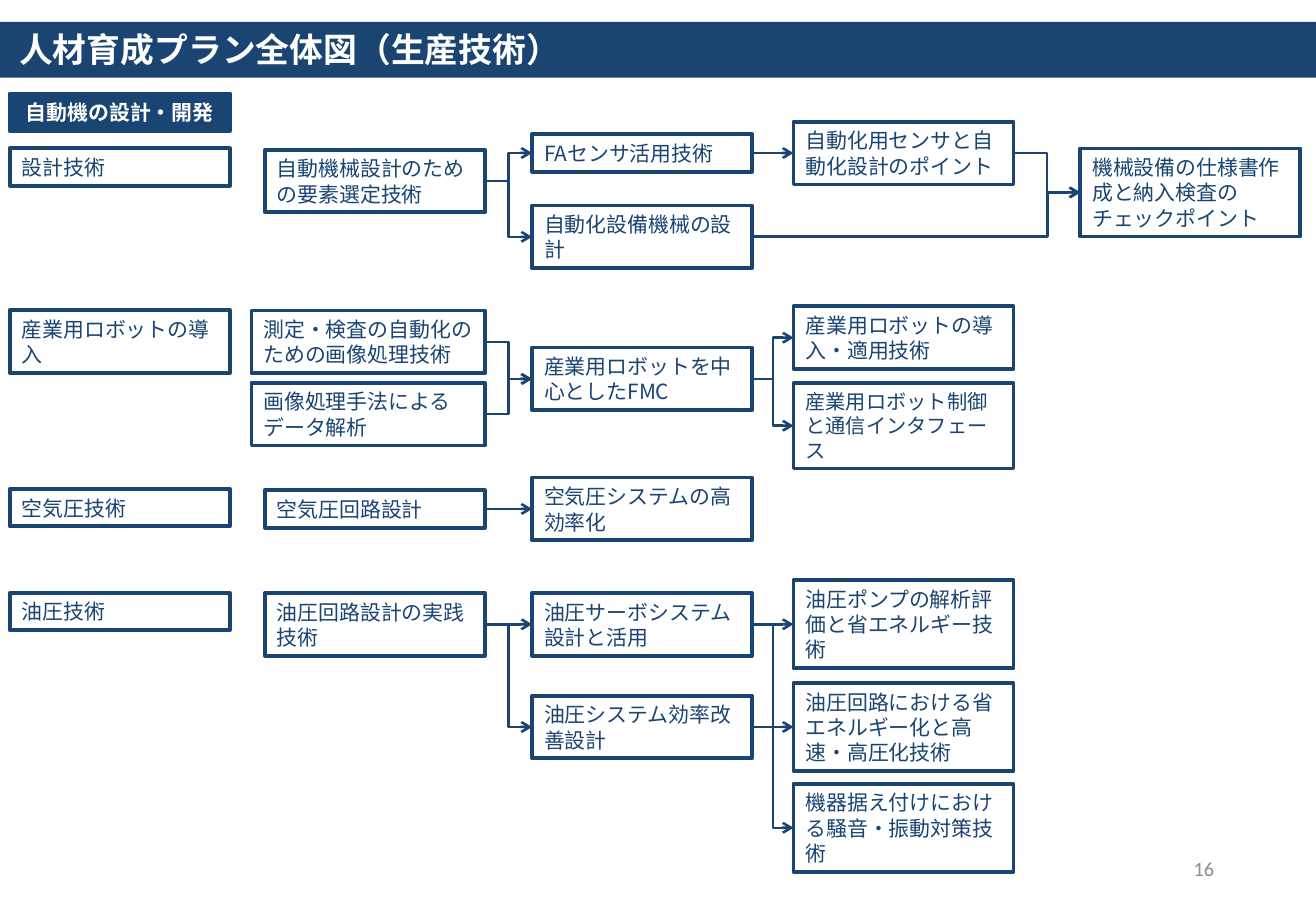
"""Draw the training plan overview for production engineering."""
from dataclasses import dataclass

from lxml import etree
from pptx import Presentation
from pptx import util as u
from pptx.dml.color import RGBColor
from pptx.enum import shapes, text
from pptx.oxml.ns import qn


@dataclass(frozen=True)
class Theme:
    navy: RGBColor = RGBColor(0x1A, 0x44, 0x72)
    white: RGBColor = RGBColor(0xFF, 0xFF, 0xFF)
    grey: RGBColor = RGBColor(0x8C, 0x8C, 0x8C)
    font: str = "Noto Sans CJK JP"
    number_font: str = "Calibri"
    title_size: float = 20
    body_size: float = 12.4
    small_size: float = 12
    border: float = 2.25
    arrow: float = 1.5
    leading: float = 1.21


@dataclass(frozen=True)
class Course:
    key: str
    column: str
    middle: float
    lines: int
    label: str
    size: float = Theme.body_size


@dataclass(frozen=True)
class Link:
    start: str
    end: str
    bend: float = 0.5


THEME = Theme()
WIDTH, HEIGHT = u.Inches(10.83), u.Inches(7.5)
COLUMNS = {
    "field": (0.74, 16.71),
    "wide": (19.11, 17.73),
    "basic": (20.13, 16.71),
    "middle": (40.44, 16.71),
    "advanced": (60.3, 16.71),
    "final": (82.09, 16.71),
}
COURSES = [
    Course("design", "field", 18.33, 1, "設計技術"),
    Course("elements", "basic", 19.87, 2, "自動機械設計のための要素選定技術"),
    Course("fa_sensor", "middle", 16.8, 1, "FAセンサ活用技術"),
    Course("equipment", "middle", 26, 2, "自動化設備機械の設計"),
    Course("sensor_points", "advanced", 16.8, 2, "自動化用センサと自動化設計のポイント"),
    Course("inspection", "final", 21.13, 3, "機械設備の仕様書作成と納入検査のチェックポイント"),
    Course("robot", "field", 37.47, 2, "産業用ロボットの導入"),
    Course("measuring", "wide", 37.53, 2, "測定・検査の自動化のための画像処理技術"),
    Course("imaging", "wide", 45.47, 2, "画像処理手法によるデータ解析"),
    Course("fmc", "middle", 41.6, 2, "産業用ロボットを中心としたFMC"),
    Course("robot_use", "advanced", 37.07, 2, "産業用ロボットの導入・適用技術"),
    Course("robot_control", "advanced", 46.73, 3, "産業用ロボット制御と通信インタフェース", THEME.small_size),
    Course("air", "field", 55.73, 1, "空気圧技術"),
    Course("air_circuit", "basic", 55.87, 1, "空気圧回路設計"),
    Course("air_system", "middle", 55.87, 2, "空気圧システムの高効率化"),
    Course("oil", "field", 67.13, 1, "油圧技術"),
    Course("oil_circuit", "basic", 68.53, 2, "油圧回路設計の実践技術"),
    Course("servo", "middle", 68.53, 2, "油圧サーボシステム設計と活用"),
    Course("efficiency", "middle", 79.8, 2, "油圧システム効率改善設計"),
    Course("pump", "advanced", 68.53, 3, "油圧ポンプの解析評価と省エネルギー技術"),
    Course("high_pressure", "advanced", 79.8, 3, "油圧回路における省エネルギー化と高速・高圧化技術"),
    Course("vibration", "advanced", 90.87, 3, "機器据え付けにおける騒音・振動対策技術"),
]
LINKS = [
    Link("elements", "fa_sensor"),
    Link("elements", "equipment"),
    Link("fa_sensor", "sensor_points"),
    Link("sensor_points", "inspection"),
    Link("equipment", "inspection", 0.9),
    Link("measuring", "fmc"),
    Link("imaging", "fmc"),
    Link("fmc", "robot_use"),
    Link("fmc", "robot_control"),
    Link("air_circuit", "air_system"),
    Link("oil_circuit", "servo"),
    Link("oil_circuit", "efficiency"),
    Link("servo", "pump"),
    Link("servo", "vibration"),
    Link("efficiency", "high_pressure"),
]


def across(percent: float) -> int:
    return round(WIDTH * percent / 100)


def down(percent: float) -> int:
    return round(HEIGHT * percent / 100)


def write(box, words: str, size: float, color: RGBColor, align, anchor,
          bold: bool = False, font: str = THEME.font) -> None:
    frame = box.text_frame
    frame.word_wrap = True
    frame.vertical_anchor = anchor
    para = frame.paragraphs[0]
    para.text = words
    para.alignment = align
    para.line_spacing = u.Pt(round(size * THEME.leading, 1))
    para.font.size = u.Pt(size)
    para.font.bold = bold
    para.font.name = font
    para.font.color.rgb = color
    defaults = para._p.pPr.find(qn("a:defRPr"))
    etree.SubElement(defaults, qn("a:ea"), typeface=font)


def add_box(page, left: int, top: int, width: int, height: int, filled: bool = False):
    box = page.shapes.add_shape(shapes.MSO_SHAPE.RECTANGLE, left, top, width, height)
    box.shadow.inherit = False
    if filled:
        box.fill.solid()
        box.fill.fore_color.rgb = THEME.navy
    else:
        box.fill.background()
    box.line.color.rgb = THEME.navy
    box.line.width = u.Pt(THEME.border)
    return box


def add_course(page, course: Course, filled: bool = False):
    left, width = COLUMNS[course.column]
    height = u.Inches(0.1) + u.Pt(course.lines * course.size * THEME.leading)
    box = add_box(page, across(left), down(course.middle) - height // 2,
                  across(width), height, filled)
    write(box, course.label, course.size,
          THEME.white if filled else THEME.navy,
          text.PP_ALIGN.CENTER if filled else text.PP_ALIGN.LEFT,
          text.MSO_ANCHOR.TOP, filled)
    return box


def add_link(page, start, end, bend: float) -> None:
    rise = abs(start.top + start.height // 2 - end.top - end.height // 2)
    straight = rise < u.Pt(1)
    kind = shapes.MSO_CONNECTOR.STRAIGHT if straight else shapes.MSO_CONNECTOR.ELBOW
    arrow = page.shapes.add_connector(kind, 0, 0, 0, 0)
    arrow.begin_connect(start, 3)
    arrow.end_connect(end, 1)
    arrow.line.color.rgb = THEME.navy
    arrow.line.width = u.Pt(THEME.arrow)
    properties = arrow._element.spPr
    etree.SubElement(properties.find(qn("a:ln")), qn("a:tailEnd"), type="arrow")
    etree.SubElement(properties, qn("a:effectLst"))
    if not straight:
        guides = properties.find(qn("a:prstGeom")).find(qn("a:avLst"))
        etree.SubElement(guides, qn("a:gd"), name="adj1", fmla=f"val {round(bend * 100000)}")


def add_words(page, left: float, top: float, width: float, height: float,
              words: str, size: float, color: RGBColor, align, **style) -> None:
    box = page.shapes.add_textbox(across(left), down(top), across(width), down(height))
    write(box, words, size, color, align, text.MSO_ANCHOR.MIDDLE, **style)


def main() -> None:
    deck = Presentation()
    deck.slide_width, deck.slide_height = WIDTH, HEIGHT
    page = deck.slides.add_slide(deck.slide_layouts[6])
    band = add_box(page, 0, down(2.4), WIDTH, down(6.13), filled=True)
    band.line.fill.background()
    add_words(page, -0.65, 2.4, 45.34, 6, "人材育成プラン全体図（生産技術）",
              THEME.title_size, THEME.white, text.PP_ALIGN.CENTER, bold=True)
    add_course(page, Course("heading", "field", 12.33, 1, "自動機の設計・開発"), filled=True)
    boxes = {course.key: add_course(page, course) for course in COURSES}
    for link in LINKS:
        add_link(page, boxes[link.start], boxes[link.end], link.bend)
    add_words(page, 70.64, 92.67, 22.53, 5.33, "16", THEME.small_size,
              THEME.grey, text.PP_ALIGN.RIGHT, font=THEME.number_font)
    deck.save("out.pptx")


if __name__ == "__main__":
    main()
